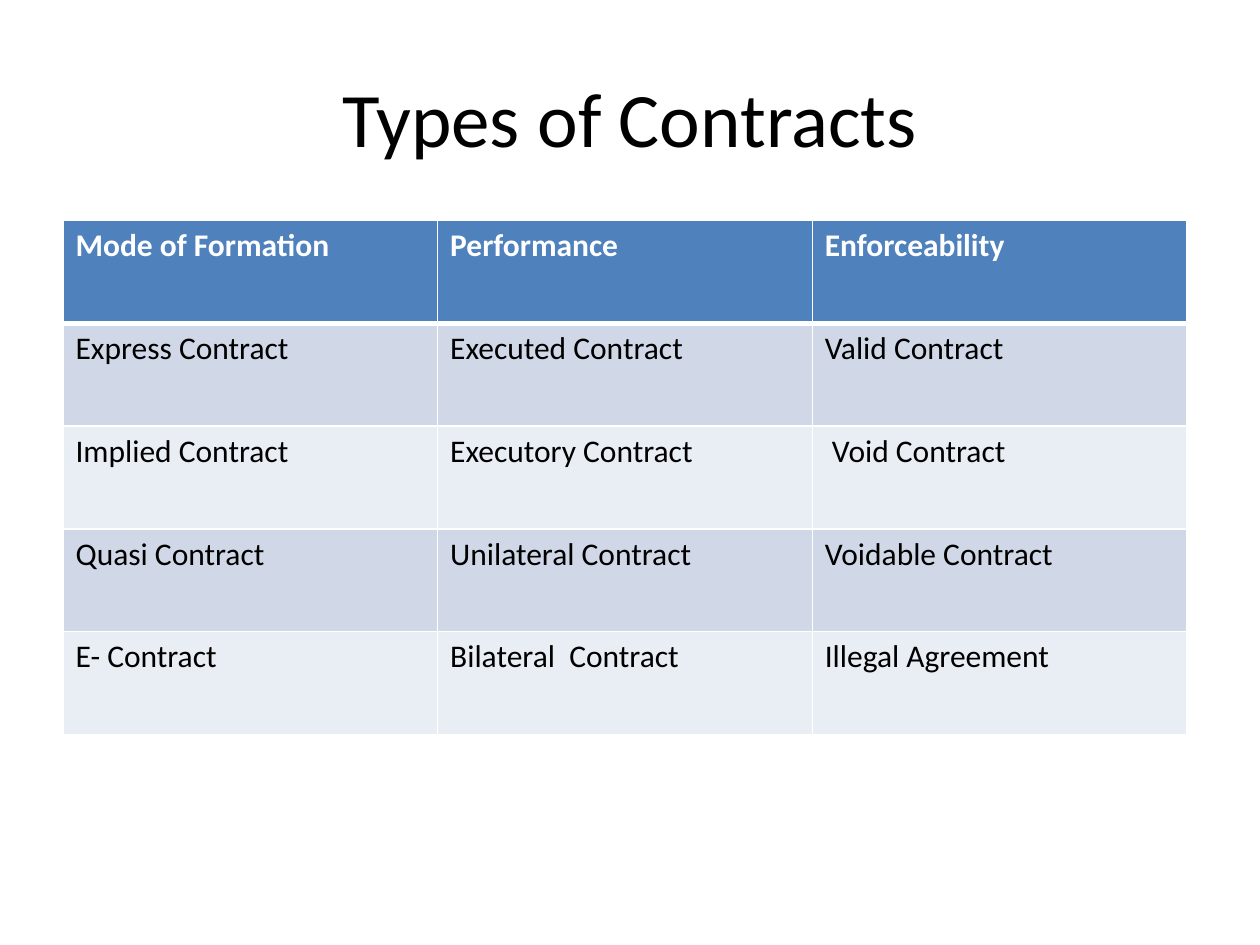
"""Build the Types of Contracts slide: a title above a three-column table."""
from dataclasses import dataclass

from lxml.etree import SubElement
from pptx import Presentation
from pptx.dml.color import RGBColor as RGB
from pptx.enum.text import MSO_ANCHOR as Anchor, PP_ALIGN as Align
from pptx.oxml.ns import qn
from pptx.util import Inches, Pt

COLORS = {
    "text": "000000",
    "header_text": "FFFFFF",
    "border": "FFFFFF",
    "header": "4F81BD",
    "band_dark": "D0D8E8",
    "band_light": "E9EDF4",
}


@dataclass(frozen=True)
class Column:
    heading: str
    contracts: tuple[str, ...]


COLUMNS = (
    Column("Mode of Formation", (
        "Express Contract", "Implied Contract", "Quasi Contract", "E- Contract")),
    Column("Performance", (
        "Executed Contract", "Executory Contract", "Unilateral Contract",
        "Bilateral  Contract")),
    Column("Enforceability", (
        "Valid Contract", " Void Contract", "Voidable Contract",
        "Illegal Agreement")),
)


def write(tf, text: str, *, size: int = 18, color: str = "text",
          bold: bool = False, align=Align.LEFT) -> None:
    p = tf.paragraphs[0]
    p.alignment = align
    r = p.add_run()
    r.text = text
    r.font.name = "Calibri"
    r.font.size = Pt(size)
    r.font.bold = bold
    r.font.color.rgb = RGB.from_string(COLORS[color])


def set_borders(cell, **widths: float) -> None:
    tc_pr = cell._tc.get_or_add_tcPr()
    for side in "LRTB":
        ln = SubElement(tc_pr, qn(f"a:ln{side}"), w=str(Pt(widths.get(side, 1))))
        fill = SubElement(ln, qn("a:solidFill"))
        SubElement(fill, qn("a:srgbClr"), val=COLORS["border"])


def draw_cell(cell, text: str, row: int) -> None:
    is_header = row == 0
    if is_header:
        set_borders(cell, B=3)
        band = "header"
    else:
        set_borders(cell, T=3 if row == 1 else 1)
        band = "band_dark" if row % 2 else "band_light"
    cell.fill.solid()
    cell.fill.fore_color.rgb = RGB.from_string(COLORS[band])
    write(cell.text_frame, text, bold=is_header,
          color="header_text" if is_header else "text")


def draw_table(slide, columns: tuple[Column, ...]) -> None:
    rows = 1 + len(columns[0].contracts)
    table = slide.shapes.add_table(rows, len(columns), Inches(0.5), Inches(1.75),
                                   Inches(8.92), Inches(4.08)).table
    for c, column in enumerate(columns):
        for r, text in enumerate((column.heading, *column.contracts)):
            draw_cell(table.cell(r, c), text, r)


def main() -> None:
    prs = Presentation()
    prs.slide_width, prs.slide_height = Inches(10), Inches(7.5)
    s = prs.slides.add_slide(prs.slide_layouts[5])
    title = s.shapes.title
    title.left, title.top = Inches(0.5), Inches(0.3)
    title.width, title.height = Inches(9), Inches(1.25)
    title.text_frame.vertical_anchor = Anchor.MIDDLE
    write(title.text_frame, "Types of Contracts", size=44, align=Align.CENTER)
    draw_table(s, COLUMNS)
    prs.save("out.pptx")


if __name__ == "__main__":
    main()
